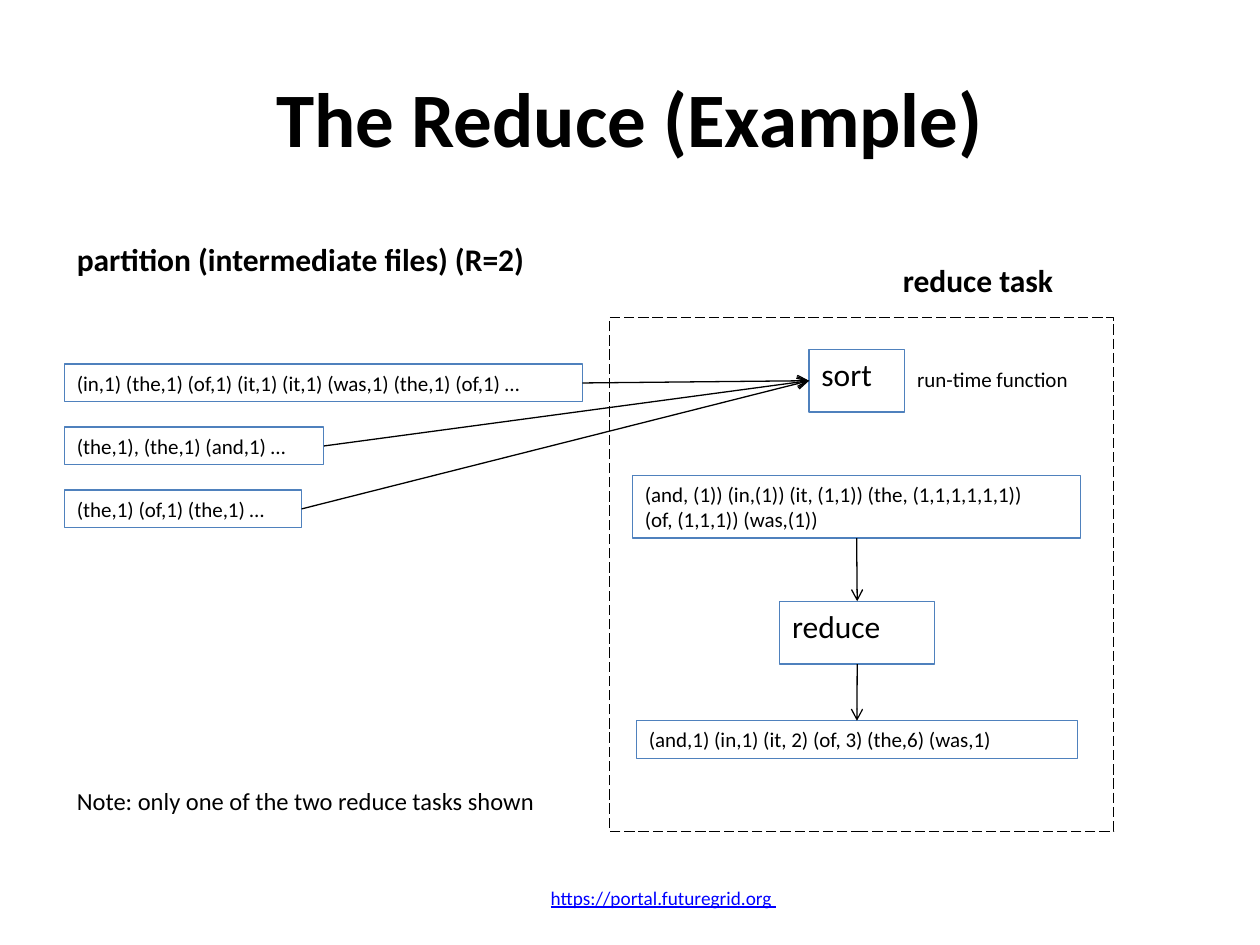
from dataclasses import dataclass

import pptx
import pptx.dml.color
import pptx.enum.dml
import pptx.enum.shapes
import pptx.enum.text
import pptx.oxml
import pptx.oxml.ns
import pptx.util
from pptx.util import Cm

BLACK = pptx.dml.color.RGBColor(0x00, 0x00, 0x00)
BLUE = pptx.dml.color.RGBColor(0x4F, 0x81, 0xBD)
LINK_BLUE = pptx.dml.color.RGBColor(0x00, 0x00, 0xFF)
FONT = "Calibri"
LINE_WIDTH = pptx.util.Pt(0.75)
ALIGN = pptx.enum.text.PP_ALIGN
ANCHOR = pptx.enum.text.MSO_ANCHOR
RECTANGLE = pptx.enum.shapes.MSO_SHAPE.RECTANGLE
# Connection sites of a rectangle
TOP, LEFT, BOTTOM, RIGHT = range(4)


@dataclass(frozen=True)
class Block:
    """A piece of text, with its place in centimetres."""
    text: str
    left: float
    top: float
    width: float
    height: float
    size: int = 12
    bold: bool = False
    underline: bool = False
    color: pptx.dml.color.RGBColor = BLACK
    centered: bool = False

    def place(self) -> tuple:
        return Cm(self.left), Cm(self.top), Cm(self.width), Cm(self.height)


def write_text(shape, block: Block) -> None:
    frame = shape.text_frame
    frame.word_wrap = True
    frame.vertical_anchor = ANCHOR.MIDDLE if block.centered else ANCHOR.TOP
    frame.text = block.text
    for paragraph in frame.paragraphs:
        paragraph.alignment = ALIGN.CENTER if block.centered else ALIGN.LEFT
        for run in paragraph.runs:
            run.font.name = FONT
            run.font.size = pptx.util.Pt(block.size)
            run.font.bold = block.bold
            run.font.underline = block.underline
            run.font.color.rgb = block.color


def add_label(slide, block: Block) -> None:
    write_text(slide.shapes.add_textbox(*block.place()), block)


def add_frame(slide, place: tuple, color: pptx.dml.color.RGBColor):
    shape = slide.shapes.add_shape(RECTANGLE, *place)
    shape.shadow.inherit = False
    shape.fill.background()
    shape.line.color.rgb = color
    shape.line.width = LINE_WIDTH
    return shape


def add_box(slide, block: Block):
    shape = add_frame(slide, block.place(), BLUE)
    write_text(shape, block)
    return shape


def add_arrow(slide, source, source_site: int, target, target_site: int) -> None:
    connector = slide.shapes.add_connector(
        pptx.enum.shapes.MSO_CONNECTOR.STRAIGHT, 0, 0, 0, 0)
    connector.begin_connect(source, source_site)
    connector.end_connect(target, target_site)
    connector.line.color.rgb = BLACK
    connector.line.width = LINE_WIDTH
    properties = connector.element.spPr
    line = properties.find(pptx.oxml.ns.qn("a:ln"))
    namespace = pptx.oxml.ns.nsdecls("a")
    line.append(pptx.oxml.parse_xml(f'<a:tailEnd {namespace} type="arrow"/>'))
    properties.append(pptx.oxml.parse_xml(f"<a:effectLst {namespace}/>"))


# Title, headings, notes and footer
LABELS = [
    Block("https://portal.futuregrid.org ", 8.74, 17.58, 9.27, 1.02, 11,
          underline=True, color=LINK_BLUE, centered=True),
    Block("The Reduce (Example)", 1.27, 0.76, 22.86, 3.18, 44,
          bold=True, centered=True),
    Block("reduce task", 17.95, 5.13, 4.1, 1.02, 18, bold=True),
    Block("partition (intermediate files) (R=2)", 1.3, 4.72, 10.8, 1.02, 18,
          bold=True),
    Block("Note: only one of the two reduce tasks shown", 1.3, 15.72, 10.54,
          0.86, 14),
    Block("run-time function", 18.24, 7.26, 3.68, 0.76),
]

# Intermediate files, stacked at equal steps: text and width
FILES = [
    ("(in,1) (the,1) (of,1) (it,1) (it,1) (was,1) (the,1) (of,1) …", 10.44),
    ("(the,1), (the,1) (and,1) …", 5.23),
    ("(the,1) (of,1) (the,1) …", 4.78),
]
FILES_LEFT, FILES_TOP, FILES_STEP, FILE_HEIGHT = 1.3, 7.34, 1.27, 0.76

# Steps of the reduce task
SORT = Block("sort", 16.31, 7.04, 1.93, 1.27, 18)
GROUPED = Block("(and, (1)) (in,(1)) (it, (1,1)) (the, (1,1,1,1,1,1))\n"
                "(of, (1,1,1)) (was,(1))", 12.75, 9.58, 9.04, 1.27)
REDUCE = Block("reduce", 15.72, 12.12, 3.12, 1.27, 18)
RESULT = Block("(and,1) (in,1) (it, 2) (of, 3) (the,6) (was,1)",
               12.83, 14.53, 8.89, 0.76)


def main() -> None:
    presentation = pptx.Presentation()
    presentation.slide_width = Cm(25.4)
    presentation.slide_height = Cm(19.05)
    slide = presentation.slides.add_slide(presentation.slide_layouts[6])

    for label in LABELS:
        add_label(slide, label)

    # Files feeding the sort
    sort = add_box(slide, SORT)
    for index, (text, width) in enumerate(FILES):
        top = FILES_TOP + index * FILES_STEP
        file_box = add_box(
            slide, Block(text, FILES_LEFT, top, width, FILE_HEIGHT))
        add_arrow(slide, file_box, RIGHT, sort, LEFT)

    # Grouped pairs, reduce and result
    grouped, reduce_box, result = (
        add_box(slide, block) for block in (GROUPED, REDUCE, RESULT))
    add_arrow(slide, grouped, BOTTOM, reduce_box, TOP)
    add_arrow(slide, reduce_box, BOTTOM, result, TOP)

    # Dashed border of the reduce task
    border = add_frame(
        slide, (Cm(12.29), Cm(6.4), Cm(10.16), Cm(10.36)), BLACK)
    border.line.dash_style = pptx.enum.dml.MSO_LINE.LONG_DASH

    presentation.save("out.pptx")


if __name__ == "__main__":
    main()
